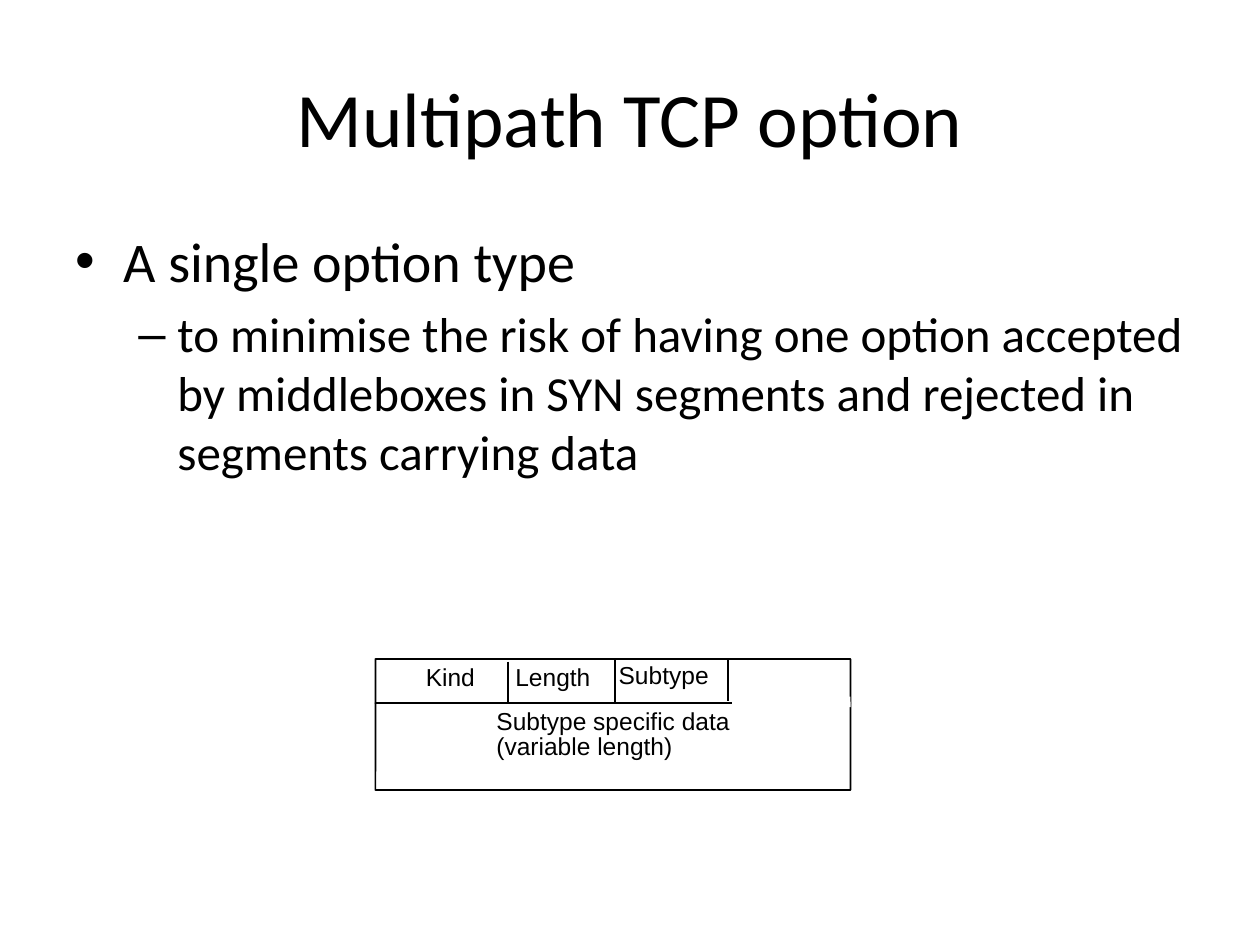
from lxml.etree import SubElement
from pptx import Presentation
from pptx.dml.color import RGBColor
from pptx.enum.shapes import MSO_CONNECTOR, MSO_SHAPE
from pptx.enum.text import MSO_ANCHOR, PP_ALIGN
from pptx.oxml.ns import qn
from pptx.util import Inches, Pt

COLORS = {"ink": "000000", "paper": "FFFFFF"}


def rgb(name):
    """Return the named colour."""
    return RGBColor.from_string(COLORS[name])


def style_runs(p, size, font):
    """Format every run of a paragraph."""
    for r in p.runs:
        r.font.size = Pt(size)
        r.font.name = font
        r.font.color.rgb = rgb("ink")


def add_title(s, text, x, y, w, h):
    """Place and format the title placeholder."""
    sp = s.shapes.title
    sp.left, sp.top, sp.width, sp.height = map(Inches, (x, y, w, h))
    tf = sp.text_frame
    tf.text = text
    tf.vertical_anchor = MSO_ANCHOR.MIDDLE
    tf.paragraphs[0].alignment = PP_ALIGN.CENTER
    style_runs(tf.paragraphs[0], 44, "Calibri")


def add_bullets(s, items, x, y, w, h):
    """Write a two-level bullet list in the given box."""
    levels = [(32, "•", 0.38, 0.38), (28, "–", 0.81, 0.31)]
    tf = s.shapes.add_textbox(*map(Inches, (x, y, w, h))).text_frame
    tf.word_wrap = True
    for i, (level, text) in enumerate(items):
        size, mark, margin, hang = levels[level]
        p = tf.paragraphs[0] if i == 0 else tf.add_paragraph()
        p.text = text
        p.level = level
        p.space_before = Pt(size * 0.2)
        style_runs(p, size, "Calibri")
        pPr = p._p.get_or_add_pPr()
        pPr.set("marL", str(Inches(margin)))
        pPr.set("indent", str(-Inches(hang)))
        SubElement(pPr, qn("a:buFont")).set("typeface", "Arial")
        SubElement(pPr, qn("a:buChar")).set("char", mark)


def add_box(s, x, y, w, h):
    """Draw one outlined band of the option header."""
    sp = s.shapes.add_shape(MSO_SHAPE.ROUNDED_RECTANGLE, *map(Inches, (x, y, w, h)))
    sp.adjustments[0] = 0.005
    sp.shadow.inherit = False
    sp.fill.solid()
    sp.fill.fore_color.rgb = rgb("paper")
    sp.line.color.rgb = rgb("ink")
    sp.line.width = Pt(1)


def add_label(s, text, x, y, w, h):
    """Write a field label on a plain background."""
    sp = s.shapes.add_textbox(*map(Inches, (x, y, w, h)))
    sp.fill.solid()
    sp.fill.fore_color.rgb = rgb("paper")
    tf = sp.text_frame
    tf.margin_left = tf.margin_right = tf.margin_top = tf.margin_bottom = 0
    tf.word_wrap = False
    tf.text = text
    for p in tf.paragraphs:
        p.line_spacing = 0.84
        style_runs(p, 14, "Arial")


def add_line(s, x1, y1, x2, y2, color, width):
    """Draw a straight line."""
    c = s.shapes.add_connector(MSO_CONNECTOR.STRAIGHT, *map(Inches, (x1, y1, x2, y2)))
    c.line.color.rgb = rgb(color)
    c.line.width = Pt(width)
    SubElement(c._element.spPr, qn("a:effectLst"))


def add_option_format(s, x, y, w, h):
    """Draw the option layout: a row of fields above the data area."""
    row = 0.35
    add_box(s, x, y, w, row)
    add_box(s, x, y + row, w, h - row)
    add_label(s, "Subtype", x + 1.93, y + 0.05, 0.72, 0.2)
    add_label(s, "Kind", x + 0.4, y + 0.06, 0.4, 0.2)
    add_label(s, "Length", x + 1.11, y + 0.06, 0.61, 0.2)
    add_label(s, "Subtype specific data\n(variable length)", x + 0.96, y + 0.41, 1.87, 0.4)
    for dx, dy in [(1.9, 0.01), (1.05, 0.02), (2.8, 0)]:
        add_line(s, x + dx, y + dy, x + dx, y + dy + 0.33, "ink", 1)
    add_line(s, x + 2.83, y + row, x + w, y + row - 0.01, "paper", 6)


def main():
    """Build and save the slide."""
    prs = Presentation()
    prs.slide_width, prs.slide_height = Inches(10), Inches(7.5)
    s = prs.slides.add_slide(prs.slide_layouts[5])
    add_title(s, "Multipath TCP option", 0.5, 0.3, 9, 1.25)
    add_bullets(s, [
        (0, "A single option type"),
        (1, "to minimise the risk of having one option accepted by middleboxes "
            "in SYN segments and rejected in segments carrying data"),
    ], 0.5, 1.75, 9, 4.95)
    add_option_format(s, 2.98, 5.23, 3.77, 1.04)
    prs.save("out.pptx")


if __name__ == "__main__":
    main()
